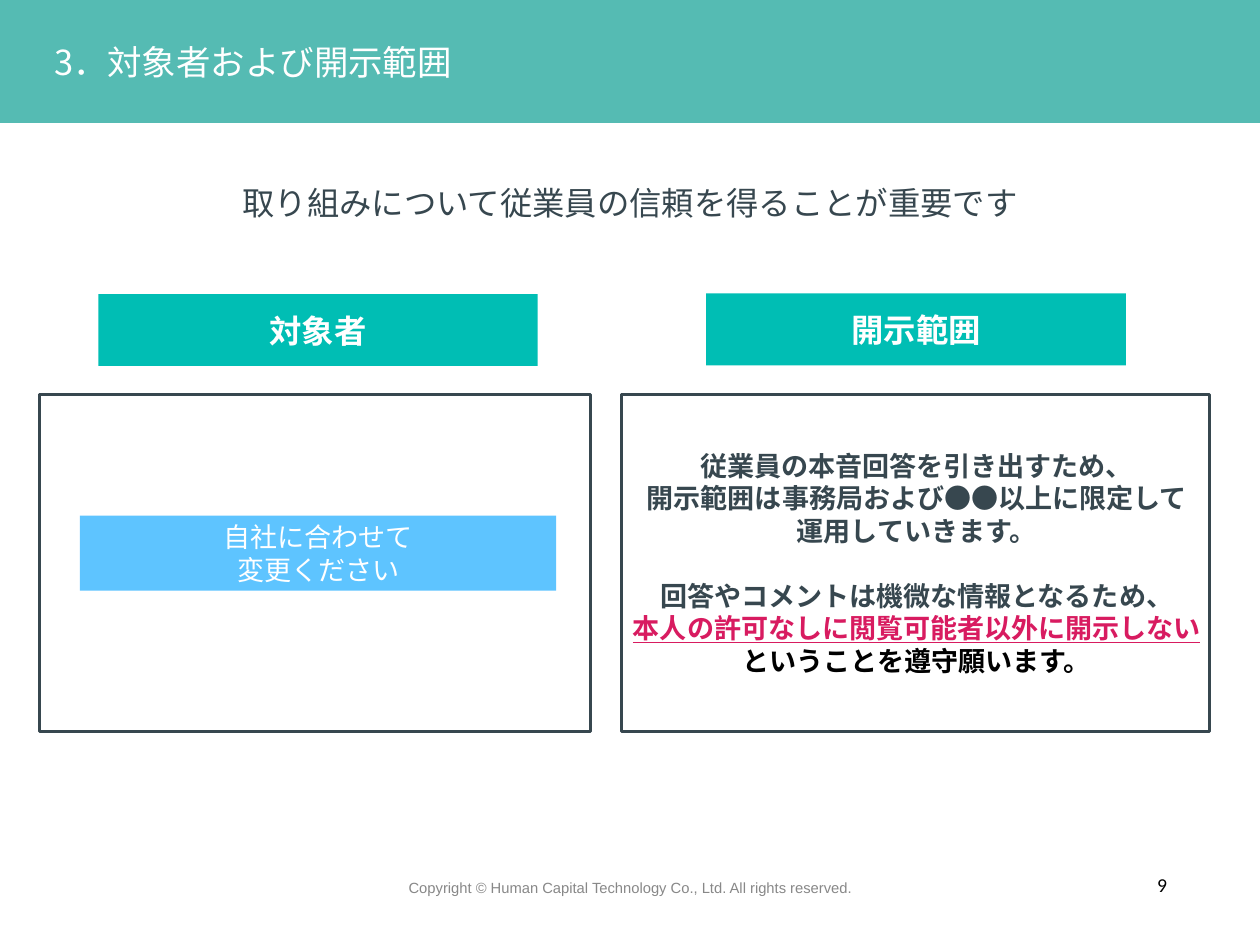
from pptx import Presentation
from pptx.dml.color import RGBColor
from pptx.enum import shapes, text
from pptx.util import Pt
from lxml import etree

NOTO = "Noto Sans CJK JP"
DARK, TEAL, WHITE = "37474F", "00BEB4", "FFFFFF"
A = "{http://schemas.openxmlformats.org/drawingml/2006/main}"


def rgb(code):
    return RGBColor.from_string(code)


def write(box, words, size=22, color=WHITE, font=NOTO, bold=False,
          align="CENTER", anchor="MIDDLE", pad=3.6, wrap=True):
    frame = box.text_frame
    frame.text = words
    frame.word_wrap = wrap
    frame.auto_size = text.MSO_AUTO_SIZE.NONE
    frame.vertical_anchor = text.MSO_ANCHOR[anchor]
    frame.margin_left = frame.margin_right = Pt(pad)
    frame.margin_top = frame.margin_bottom = Pt(pad)
    for para in frame.paragraphs:
        para.alignment = text.PP_ALIGN[align]
        para.line_spacing = Pt(round(size * 1.2, 1))
        for run in para.runs:
            run.font.size, run.font.bold = Pt(size), bold
            run.font.name = font
            run.font.color.rgb = rgb(color)
            east = etree.SubElement(run.font._element, A + "ea")
            east.set("typeface", font)
    return frame.paragraphs


deck = Presentation()
deck.slide_width, deck.slide_height = Pt(1024), Pt(768)
slide = deck.slides.add_slide(deck.slide_layouts[5])
items = slide.shapes

# Filled blocks: band, two frames, two headings, blue note
blocks = {}
for name, x, y, w, h, fill, line in [
    ("band", 0, 0, 1024, 100, "55BBB3", None),
    ("left", 32, 320.5, 448, 274, WHITE, DARK),
    ("right", 505, 320.5, 478, 274, WHITE, DARK),
    ("target", 80, 239, 357, 58.5, TEAL, None),
    ("scope", 574, 238.5, 341, 58.5, TEAL, None),
    ("note", 65, 419, 387, 61, "00A2FF", None),
]:
    block = items.add_shape(shapes.MSO_SHAPE.RECTANGLE,
                            Pt(x), Pt(y), Pt(w), Pt(h))
    block.shadow.inherit = False
    block.fill.solid()
    block.fill.fore_color.rgb = rgb(fill)
    if line:
        block.line.color.rgb = rgb(line)
        block.line.width = Pt(2)
    else:
        block.line.fill.background()
    blocks[name] = block

# See-through fill of the note
tint = blocks["note"].element.find(f".//{A}srgbClr")
etree.SubElement(tint, A + "alpha").set("val", "63000")

# Title on the band
title = items.title
title.element.addprevious(blocks["band"].element)
title.left, title.top, title.width, title.height = Pt(44), Pt(33), Pt(374), Pt(34)
write(title, "3．対象者および開示範囲", size=28, align="LEFT", pad=0, wrap=False)

# Block labels
write(blocks["target"], "対象者", size=26.3, bold=True)
write(blocks["scope"], "開示範囲", size=26.3, bold=True)
write(blocks["note"], "自社に合わせて\n変更ください")

# Lead, body, footer and page number
boxes = {}
for name, x, y, w, h in [
    ("lead", 63, 145, 898, 39),
    ("body", 492, 361.5, 506, 194),
    ("foot", 281, 711, 463, 21),
    ("page", 914, 706, 61, 27),
]:
    boxes[name] = items.add_textbox(Pt(x), Pt(y), Pt(w), Pt(h))

write(boxes["lead"], "取り組みについて従業員の信頼を得ることが重要です",
      size=26.3, color=DARK, anchor="TOP")
write(boxes["foot"],
      "Copyright © Human Capital Technology Co., Ltd. All rights reserved.",
      size=12, color="888888", font="Arial")
write(boxes["page"], "9", size=16, color="000000", font="Calibri", anchor="TOP")

rules = write(boxes["body"], "\n".join([
    "従業員の本音回答を引き出すため、",
    "開示範囲は事務局および●●以上に限定して",
    "運用していきます。",
    "回答やコメントは機微な情報となるため、",
    "本人の許可なしに閲覧可能者以外に開示しない",
    "ということを遵守願います。",
]), color=DARK, bold=True, anchor="TOP")
rules[3].space_before = Pt(26.4)
key, last = rules[4].runs[0].font, rules[5].runs[0].font
key.color.rgb, key.underline = rgb("D81B60"), True
last.color.rgb = rgb("000000")

deck.save("out.pptx")
